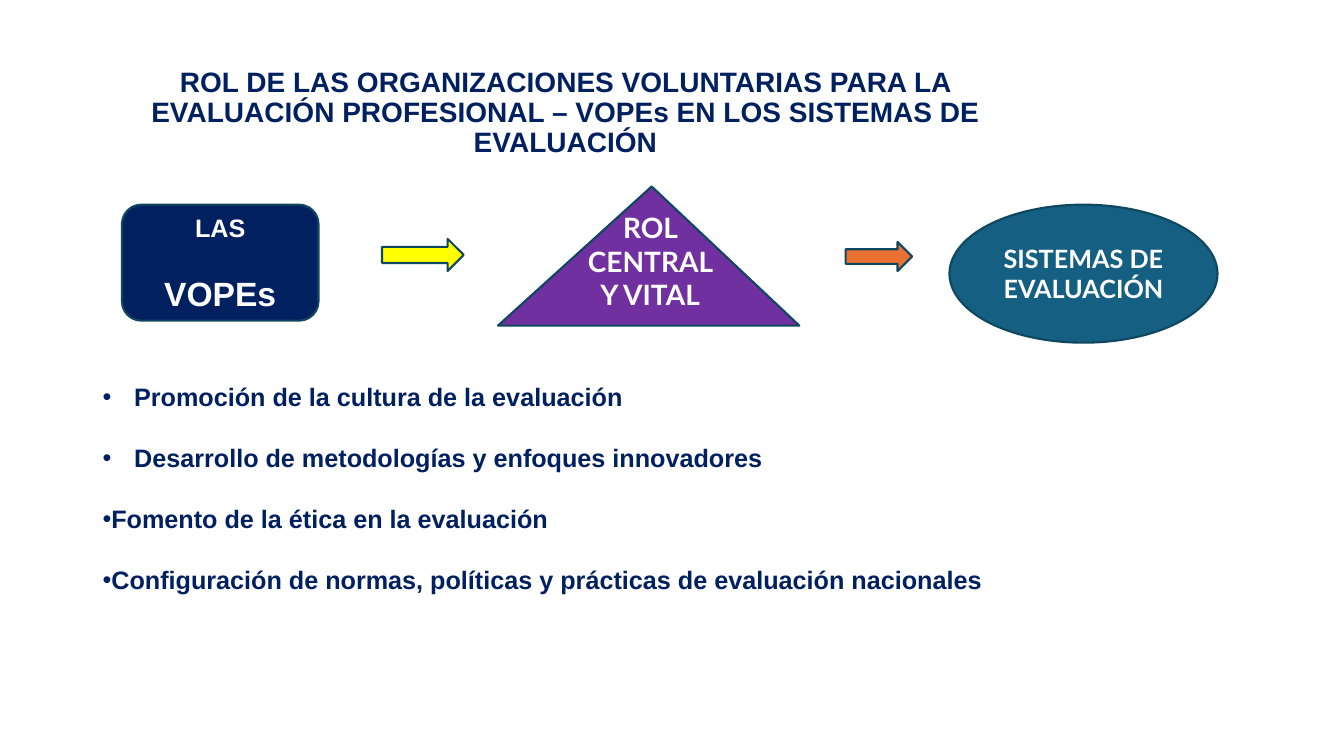
from dataclasses import dataclass

import pptx
import pptx.dml.color
import pptx.enum.shapes
import pptx.enum.text
import pptx.oxml
import pptx.oxml.ns
import pptx.util

Pt = pptx.util.Pt
RGBColor = pptx.dml.color.RGBColor
Shape = pptx.enum.shapes.MSO_SHAPE
Align = pptx.enum.text.PP_ALIGN
Anchor = pptx.enum.text.MSO_ANCHOR

NAVY = RGBColor(0x00, 0x20, 0x60)
PURPLE = RGBColor(0x70, 0x30, 0xA0)
TEAL = RGBColor(0x15, 0x60, 0x82)
YELLOW = RGBColor(0xFF, 0xFF, 0x00)
ORANGE = RGBColor(0xE9, 0x71, 0x32)
OUTLINE = RGBColor(0x10, 0x47, 0x60)
WHITE = RGBColor(0xFF, 0xFF, 0xFF)

GAP = 22
HANGING = 22.5


@dataclass(frozen=True)
class Line:
    text: str
    size: float
    space_before: float = 0


@dataclass(frozen=True)
class Figure:
    kind: Shape
    left: float
    top: float
    width: float
    height: float
    fill: RGBColor
    font: str = "Arial"
    lines: tuple[Line, ...] = ()
    adjustment: float | None = None
    margin_top: float = 3.6
    margin_bottom: float = 3.6


@dataclass(frozen=True)
class Bullet:
    text: str
    indent: float = 0


TITLE = ("ROL DE LAS ORGANIZACIONES VOLUNTARIAS PARA LA EVALUACIÓN PROFESIONAL "
         "– VOPEs EN LOS SISTEMAS DE EVALUACIÓN")

FIGURES = (
    Figure(Shape.ROUNDED_RECTANGLE, 87.1, 146.2, 140.4, 82.8, NAVY,
           lines=(Line("LAS", 18), Line("VOPEs", 24, GAP))),
    Figure(Shape.ISOSCELES_TRIANGLE, 355.7, 133.2, 215.3, 99.4, PURPLE, "Lato",
           (Line("ROL CENTRAL Y VITAL", 20),), 0.51, 0, 42.5),
    Figure(Shape.OVAL, 678.2, 146.2, 191.5, 98.6, TEAL, "Lato",
           (Line("SISTEMAS DE EVALUACIÓN", 18),)),
    Figure(Shape.RIGHT_ARROW, 272.9, 170.6, 58.3, 23, YELLOW),
    Figure(Shape.RIGHT_ARROW, 604.1, 172.8, 47.5, 20.9, ORANGE),
)

BULLETS = (
    Bullet("Promoción de la cultura de la evaluación", HANGING),
    Bullet("Desarrollo de metodologías y enfoques innovadores", HANGING),
    Bullet("Fomento de la ética en la evaluación"),
    Bullet("Configuración de normas, políticas y prácticas de evaluación nacionales"),
)


def format_runs(p, font: str, size: float, color: RGBColor) -> None:
    for r in p.runs:
        r.font.name = font
        r.font.size = Pt(size)
        r.font.bold = True
        r.font.color.rgb = color


def add_title(slide) -> None:
    sp = slide.shapes.title
    sp.left, sp.top, sp.width, sp.height = Pt(66.2), Pt(28.8), Pt(675.4), Pt(104.4)
    tf = sp.text_frame
    tf.text = TITLE
    tf.word_wrap = True
    tf.vertical_anchor = Anchor.MIDDLE
    p = tf.paragraphs[0]
    p.alignment = Align.CENTER
    p.line_spacing = 0.9
    format_runs(p, "Arial", 20, NAVY)


def add_figure(slide, figure: Figure) -> None:
    sp = slide.shapes.add_shape(figure.kind, Pt(figure.left), Pt(figure.top),
                                Pt(figure.width), Pt(figure.height))
    sp.shadow.inherit = False
    sp.fill.solid()
    sp.fill.fore_color.rgb = figure.fill
    sp.line.color.rgb = OUTLINE
    sp.line.width = Pt(1.5)
    if figure.adjustment is not None:
        sp.adjustments[0] = figure.adjustment
    tf = sp.text_frame
    tf.word_wrap = True
    tf.vertical_anchor = Anchor.MIDDLE
    tf.margin_top = Pt(figure.margin_top)
    tf.margin_bottom = Pt(figure.margin_bottom)
    for i, line in enumerate(figure.lines):
        p = tf.add_paragraph() if i else tf.paragraphs[0]
        p.text = line.text
        p.alignment = Align.CENTER
        if line.space_before:
            p.space_before = Pt(line.space_before)
        format_runs(p, figure.font, line.size, WHITE)


def add_bullets(slide) -> None:
    sp = slide.shapes.add_textbox(Pt(66.2), Pt(247), Pt(814.3), Pt(285.1))
    tf = sp.text_frame
    tf.word_wrap = True
    tf.margin_top = Pt(25.6)
    for i, bullet in enumerate(BULLETS):
        p = tf.add_paragraph() if i else tf.paragraphs[0]
        p.text = bullet.text
        pPr = p._p.get_or_add_pPr()
        pPr.set("marL", str(Pt(bullet.indent)))
        pPr.set("indent", str(-Pt(bullet.indent)))
        ns = pptx.oxml.ns.nsdecls("a")
        pPr.append(pptx.oxml.parse_xml(f'<a:buFont {ns} typeface="Arial"/>'))
        pPr.append(pptx.oxml.parse_xml(f'<a:buChar {ns} char="•"/>'))
        if i:
            p.space_before = Pt(GAP)
        format_runs(p, "Arial", 18, NAVY)


def main() -> None:
    prs = pptx.Presentation()
    prs.slide_width = Pt(960)
    prs.slide_height = Pt(540)
    slide = prs.slides.add_slide(prs.slide_layouts[5])
    add_title(slide)
    for figure in FIGURES:
        add_figure(slide, figure)
    add_bullets(slide)
    prs.save("out.pptx")


if __name__ == "__main__":
    main()
